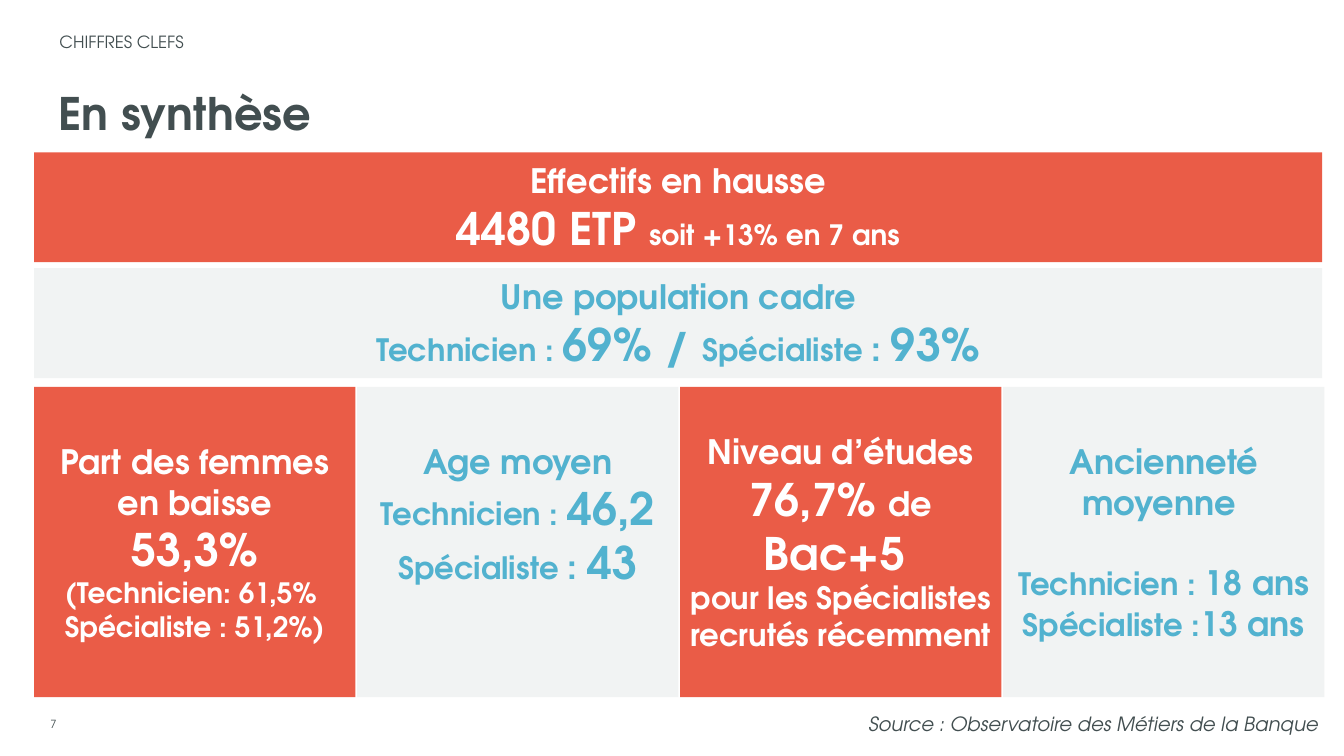
from pptx import Presentation
from pptx.dml.color import RGBColor
from pptx.enum.shapes import MSO_SHAPE
from pptx.enum.text import MSO_ANCHOR, PP_ALIGN
from pptx.util import Cm, Pt

RECTANGLE = MSO_SHAPE.RECTANGLE
MIDDLE = MSO_ANCHOR.MIDDLE
CENTER = PP_ALIGN.CENTER

FONT = "TeX Gyre Adventor"
CORAL = RGBColor(0xEA, 0x5C, 0x47)
PALE = RGBColor(0xF1, 0xF3, 0xF3)
BLUE = RGBColor(0x52, 0xB2, 0xCF)
WHITE = RGBColor(0xFF, 0xFF, 0xFF)
SLATE = RGBColor(0x42, 0x4E, 0x50)

LEFT = 0.86
BAR_TOP, BAR_PITCH, BAR_WIDTH, BAR_HEIGHT = 3.84, 2.92, 32.46, 2.77
CARD_TOP, CARD_PITCH, CARD_WIDTH, CARD_HEIGHT = 9.75, 8.14, 8.1, 7.82

presentation = Presentation()
presentation.slide_width = Cm(33.87)
presentation.slide_height = Cm(19.05)
slide = presentation.slides.add_slide(presentation.slide_layouts[6])


def add_run(paragraph, text, size, color, bold=False, italic=False):
    run = paragraph.add_run()
    run.text = text
    run.font.name = FONT
    run.font.size = Pt(size)
    run.font.color.rgb = color
    run.font.bold = bold
    run.font.italic = italic


def add_panel(left, top, width, height, fill, lines):
    """Add a filled rectangle with bold centred lines, each a list of (text, size)."""
    panel = slide.shapes.add_shape(RECTANGLE, Cm(left), Cm(top), Cm(width), Cm(height))
    panel.shadow.inherit = False
    panel.fill.solid()
    panel.fill.fore_color.rgb = fill
    panel.line.fill.background()
    frame = panel.text_frame
    frame.word_wrap = True
    frame.vertical_anchor = MIDDLE
    for index, line in enumerate(lines):
        paragraph = frame.add_paragraph() if index else frame.paragraphs[0]
        paragraph.alignment = CENTER
        for text, size in line:
            add_run(paragraph, text, size, WHITE if fill == CORAL else BLUE, bold=True)
    return frame


# Headline bars
bars = [
    (CORAL, [[("Effectifs en hausse", 24)],
             [("4480 ETP ", 32), ("soit +13% en 7 ans", 20)]]),
    (PALE, [[("Une population cadre", 24)],
            [("Technicien : ", 22), ("69% / ", 32), ("Spécialiste ", 22),
             (": ", 25), ("93%", 32)]]),
]
for row, (fill, lines) in enumerate(bars):
    add_panel(LEFT, BAR_TOP + row * BAR_PITCH, BAR_WIDTH, BAR_HEIGHT, fill, lines)

# Key figure cards
cards = [
    (CORAL, [[("Part des femmes en baisse", 24)],
             [("53,3%", 32)],
             [("(Technicien: 61,5%  Spécialiste : 51,2%)", 20)]]),
    (PALE, [[("Age moyen", 24)],
            [("Technicien : ", 22), ("46,2", 32)],
            [("Spécialiste ", 22), (": ", 25), ("43", 32)]]),
    (CORAL, [[("Niveau d’études", 24)],
             [("76,7% ", 32), ("de ", 24), ("Bac+5 ", 32)],
             [("pour les Spécialistes recrutés récemment", 22)]]),
    (PALE, [[("Ancienneté moyenne ", 24)],
            [("Technicien : ", 22), ("18 ans", 24)],
            [("Spécialiste :", 22), ("13 ans", 24)]]),
]
card_frames = [
    add_panel(LEFT + column * CARD_PITCH, CARD_TOP, CARD_WIDTH, CARD_HEIGHT, fill, lines)
    for column, (fill, lines) in enumerate(cards)
]
age_frame, seniority_frame = card_frames[1], card_frames[3]
age_frame.margin_bottom = Cm(1.5)
seniority_frame.paragraphs[1].space_before = Pt(29)

# Section name, title, page number and source: box, insets, line spacing, text style
labels = [
    ((1.5, 0.79, 9.88, 0.51), (0, 0), 1, ("CHIFFRES CLEFS", 12, SLATE)),
    ((1.47, 2.13, 30.07, 2.49), (0, 0.3), 0.8, ("En synthèse", 32, SLATE, True)),
    ((1.27, 18.08, 16.94, 0.33), (0, 0), 1, ("7", 8, SLATE)),
    ((21.64, 17.88, 12.22, 0.79), (0.25, 0.13), 0.9,
     ("Source\u00a0: Observatoire des Métiers de la Banque".replace("\u00a0", " "),
      14, SLATE, False, True)),
]
for box, (side_inset, top_inset), spacing, style in labels:
    frame = slide.shapes.add_textbox(*map(Cm, box)).text_frame
    frame.word_wrap = True
    frame.margin_left = frame.margin_right = Cm(side_inset)
    frame.margin_top = Cm(top_inset)
    frame.margin_bottom = 0
    paragraph = frame.paragraphs[0]
    paragraph.line_spacing = spacing
    add_run(paragraph, *style)

presentation.save("out.pptx")
